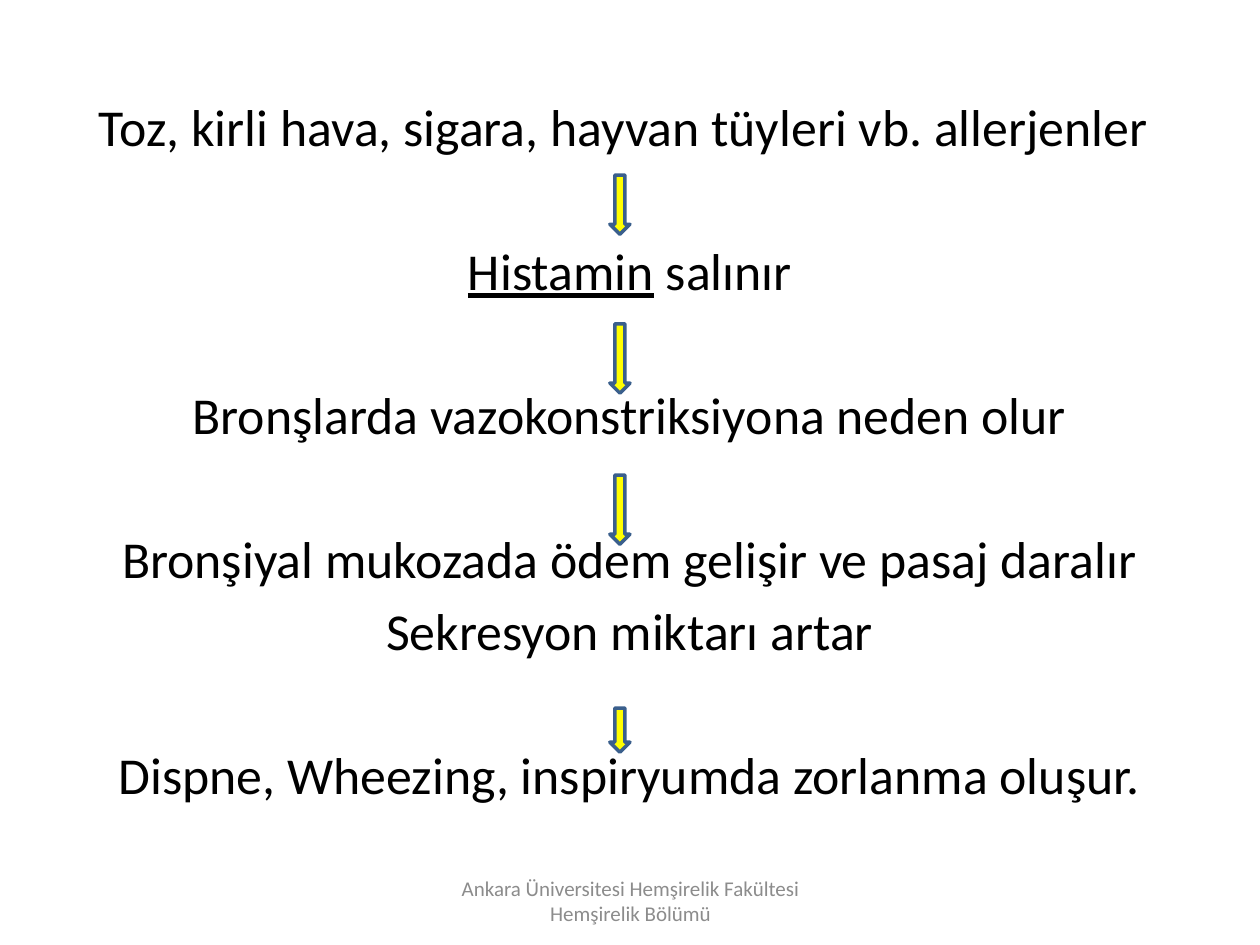
from lxml import etree
from pptx import Presentation, util as u
from pptx.dml.color import RGBColor
from pptx.enum import shapes, text

BLACK = RGBColor(0, 0, 0)
GRAY = RGBColor(0x8C, 0x8C, 0x8C)
YELLOW = RGBColor(0xFF, 0xFF, 0)
BLUE = RGBColor(0x3A, 0x5F, 0x8C)

NEAR, FAR = 5.4, 46.9
STEPS = [
    (0, [("Toz, kirli hava, sigara, hayvan tüyleri vb. allerjenler ", False)]),
    (FAR, [("Histamin", True), (" salınır", False)]),
    (FAR, [("Bronşlarda vazokonstriksiyona neden olur", False)]),
    (FAR, [("Bronşiyal mukozada ödem gelişir ve pasaj daralır", False)]),
    (NEAR, [("Sekresyon miktarı artar", False)]),
    (FAR, [("Dispne, Wheezing, inspiryumda zorlanma oluşur.", False)]),
]
FOOTER = [(0, [("Ankara Üniversitesi Hemşirelik Fakültesi Hemşirelik Bölümü", False)])]
ARROWS = [(1.39, 0.47), (2.57, 0.55), (3.77, 0.55), (5.62, 0.35)]


def put(item, form):
    for key, value in form.items():
        setattr(item, key, value)


def add_text(slide, box, paras, size, color, anchor):
    frame = slide.shapes.add_textbox(*map(u.Inches, box)).text_frame
    put(frame, {"word_wrap": True, "vertical_anchor": anchor})
    for i, (gap, runs) in enumerate(paras):
        para = frame.add_paragraph() if i else frame.paragraphs[0]
        put(para, {"alignment": text.PP_ALIGN.CENTER, "space_before": u.Pt(gap)})
        for words, under in runs:
            run = para.add_run()
            run.text = words
            put(run.font, {"name": "Calibri", "size": u.Pt(size), "underline": under})
            run.font.color.rgb = color


def add_arrow(slide, top, height):
    box = map(u.Inches, (4.84, top, 0.16, height))
    arrow = slide.shapes.add_shape(shapes.MSO_SHAPE.DOWN_ARROW, *box)
    arrow.shadow.inherit = False
    arrow.fill.solid()
    arrow.fill.fore_color.rgb = YELLOW
    arrow.line.color.rgb = BLUE
    arrow.line.width = u.Pt(2)


def main():
    deck = Presentation()
    put(deck, {"slide_width": u.Inches(10), "slide_height": u.Inches(7.5)})
    slide = deck.slides.add_slide(deck.slide_layouts[6])
    add_text(slide, (0.5, 0.7, 9, 6), STEPS, 29.6, BLACK, text.MSO_ANCHOR.TOP)
    for top, height in ARROWS:
        add_arrow(slide, top, height)
    add_text(slide, (3.42, 6.95, 3.17, 0.4), FOOTER, 12, GRAY, text.MSO_ANCHOR.MIDDLE)
    deck.save("out.pptx")


if __name__ == "__main__":
    main()
